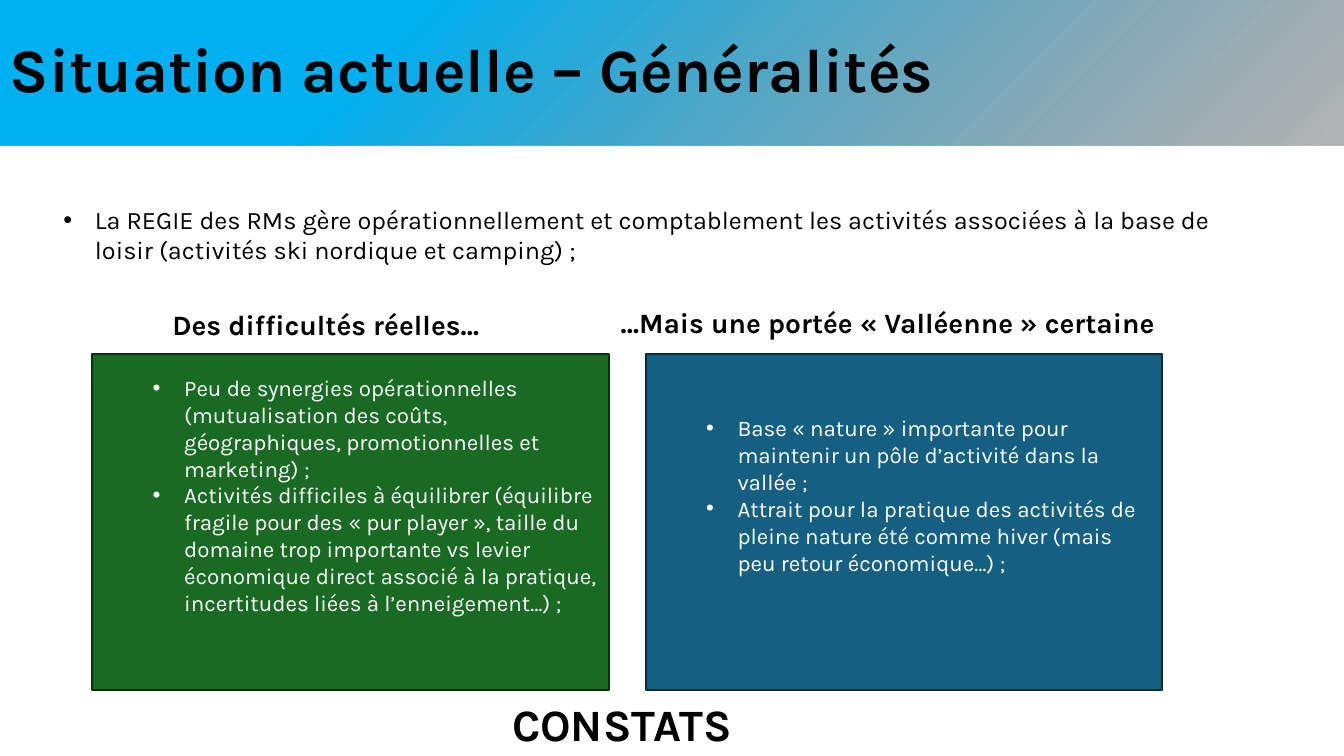
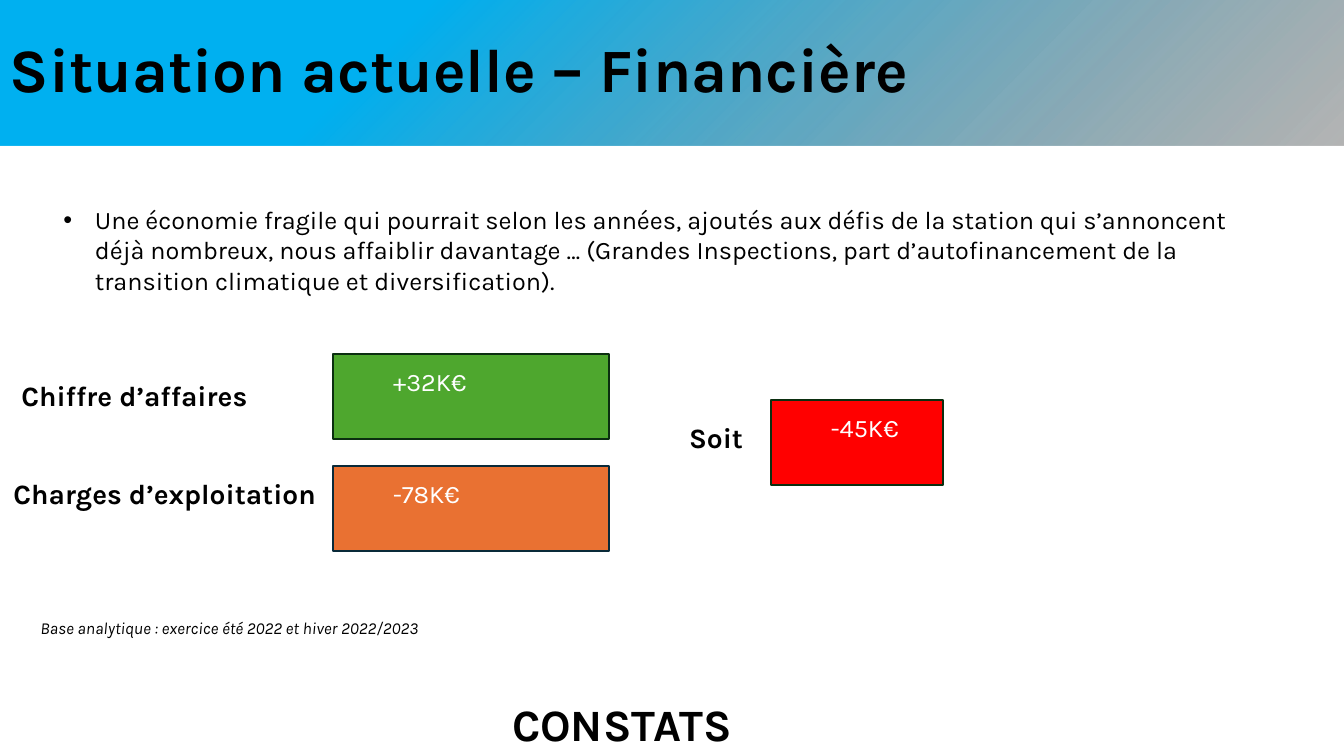
from dataclasses import dataclass

from lxml import etree
from pptx import Presentation
from pptx import util as u
from pptx.dml.color import RGBColor
from pptx.enum import shapes, text
from pptx.oxml import ns

FONT = "Karla"
BLACK = RGBColor(0x00, 0x00, 0x00)
WHITE = RGBColor(0xFF, 0xFF, 0xFF)
SKY = RGBColor(0x00, 0xB0, 0xF0)
GREY = RGBColor(0x62, 0x62, 0x62)
FOREST = RGBColor(0x19, 0x6B, 0x24)
FOREST_EDGE = RGBColor(0x0B, 0x2F, 0x10)
OCEAN = RGBColor(0x15, 0x60, 0x82)
OCEAN_EDGE = RGBColor(0x09, 0x2A, 0x39)
GREEN = RGBColor(0x4E, 0xA7, 0x2E)
ORANGE = RGBColor(0xE9, 0x71, 0x32)
RED = RGBColor(0xFF, 0x00, 0x00)

SLIDE_WIDTH, SLIDE_HEIGHT = 1280, 720
HEADER_HEIGHT = 139
BOX_TOP = 337
PANEL_WIDTH, PANEL_HEIGHT = 492, 320
VALUE_HEIGHT = 81
LABEL_HEIGHT = 42
BULLET_INDENT = 30


def px(length: int) -> u.Emu:
    return u.Emu(length * 9525)


@dataclass(frozen=True)
class TextStyle:
    size: int
    color: RGBColor = BLACK
    bold: bool = False
    italic: bool = False
    align: text.PP_ALIGN = text.PP_ALIGN.LEFT
    margin: int = 0
    bullet: bool = False
    line_spacing: float = 1.0
    bottom_inset: int = 5


@dataclass(frozen=True)
class Area:
    left: int
    top: int
    width: int
    height: int


@dataclass(frozen=True)
class Label:
    area: Area
    wording: str
    style: TextStyle


@dataclass(frozen=True)
class Box:
    area: Area
    fill: RGBColor
    edge: RGBColor
    lines: tuple[str, ...]
    style: TextStyle


TITLE = TextStyle(44, bold=True, line_spacing=0.9)
INTRO = TextStyle(18, margin=30, bullet=True)
HEADING = TextStyle(20, bold=True, align=text.PP_ALIGN.CENTER)
FOOTER = TextStyle(32, bold=True, align=text.PP_ALIGN.CENTER)
NOTE = TextStyle(12, italic=True)
PANEL = TextStyle(16, WHITE, margin=78, bullet=True, bottom_inset=56)
VALUE = TextStyle(18, WHITE, margin=48, bottom_inset=34)

CONSTATS = Label(Area(287, 659, 611, 61), "CONSTATS", FOOTER)


def write_text(shape, lines: tuple[str, ...], style: TextStyle) -> None:
    frame = shape.text_frame
    frame.word_wrap = True
    frame.margin_bottom = px(style.bottom_inset)
    for index, line in enumerate(lines):
        paragraph = frame.add_paragraph() if index else frame.paragraphs[0]
        paragraph.alignment = style.align
        paragraph.line_spacing = style.line_spacing
        properties = paragraph._p.get_or_add_pPr()
        properties.set("marL", str(px(style.margin)))
        if style.bullet:
            properties.set("indent", str(px(-BULLET_INDENT)))
            etree.SubElement(properties, ns.qn("a:buFont"), typeface="Arial")
            etree.SubElement(properties, ns.qn("a:buChar"), char="•")
        run = paragraph.add_run()
        run.text = line
        run.font.name = FONT
        run.font.size = u.Pt(style.size)
        run.font.bold = style.bold
        run.font.italic = style.italic
        run.font.color.rgb = style.color


def add_rectangle(slide, area: Area):
    shape = slide.shapes.add_shape(
        shapes.MSO_SHAPE.RECTANGLE,
        px(area.left), px(area.top), px(area.width), px(area.height),
    )
    shape.shadow.inherit = False
    shape.text_frame.vertical_anchor = text.MSO_ANCHOR.MIDDLE
    return shape


def add_header(slide, title: str) -> None:
    shape = add_rectangle(slide, Area(0, 0, SLIDE_WIDTH, HEADER_HEIGHT))
    shape.line.fill.background()
    shape.fill.gradient()
    shape.fill.gradient_angle = 315
    start, end = shape.fill.gradient_stops
    start.position, start.color.rgb = 0.29, SKY
    end.position, end.color.rgb = 1.0, GREY
    end_color = list(shape.element.iter(ns.qn("a:srgbClr")))[-1]
    etree.SubElement(end_color, ns.qn("a:alpha"), val="47000")
    write_text(shape, (title,), TITLE)


def add_box(slide, box: Box) -> None:
    shape = add_rectangle(slide, box.area)
    shape.fill.solid()
    shape.fill.fore_color.rgb = box.fill
    shape.line.color.rgb = box.edge
    shape.line.width = u.Pt(1.5)
    write_text(shape, box.lines, box.style)


def add_label(slide, label: Label) -> None:
    area = label.area
    shape = slide.shapes.add_textbox(
        px(area.left), px(area.top), px(area.width), px(area.height)
    )
    write_text(shape, (label.wording,), label.style)


def add_slide(
    presentation, title: str, boxes: tuple[Box, ...], labels: tuple[Label, ...]
) -> None:
    slide = presentation.slides.add_slide(presentation.slide_layouts[6])
    add_header(slide, title)
    for box in boxes:
        add_box(slide, box)
    for label in (*labels, CONSTATS):
        add_label(slide, label)


def value_box(
    left: int, top: int, width: int, fill: RGBColor, edge: RGBColor, amount: str
) -> Box:
    return Box(Area(left, top, width, VALUE_HEIGHT), fill, edge, (amount,), VALUE)


GENERAL_BOXES = (
    Box(
        Area(88, BOX_TOP, PANEL_WIDTH, PANEL_HEIGHT), FOREST, FOREST_EDGE,
        (
            "Peu de synergies opérationnelles (mutualisation des coûts, "
            "géographiques, promotionnelles et marketing) ;",
            "Activités difficiles à équilibrer (équilibre fragile pour des "
            "« pur player », taille du domaine trop importante vs levier "
            "économique direct associé à la pratique, incertitudes liées à "
            "l’enneigement…) ;",
        ),
        PANEL,
    ),
    Box(
        Area(615, BOX_TOP, PANEL_WIDTH, PANEL_HEIGHT), OCEAN, OCEAN_EDGE,
        (
            "Base « nature » importante pour maintenir un pôle d’activité "
            "dans la vallée ;",
            "Attrait pour la pratique des activités de pleine nature été "
            "comme hiver (mais peu retour économique…) ;",
        ),
        PANEL,
    ),
)
GENERAL_LABELS = (
    Label(
        Area(51, 190, 1154, 68),
        "La REGIE des RMs gère opérationnellement et comptablement les "
        "activités associées à la base de loisir (activités ski nordique et "
        "camping) ;",
        INTRO,
    ),
    Label(Area(5, 288, 611, LABEL_HEIGHT), "Des difficultés réelles…", HEADING),
    Label(
        Area(540, 286, 611, LABEL_HEIGHT),
        "…Mais une portée « Valléenne » certaine",
        HEADING,
    ),
)
FINANCE_BOXES = (
    value_box(317, BOX_TOP, 263, GREEN, FOREST_EDGE, "+32K€"),
    value_box(317, 444, 263, ORANGE, OCEAN_EDGE, "-78K€"),
    value_box(734, 381, 164, RED, FOREST_EDGE, "-45K€"),
)
FINANCE_LABELS = (
    Label(
        Area(51, 190, 1170, 97),
        "Une économie fragile qui pourrait selon les années, ajoutés aux défis "
        "de la station qui s’annoncent déjà nombreux, nous affaiblir davantage "
        "… (Grandes Inspections, part d’autofinancement de la transition "
        "climatique et diversification).",
        INTRO,
    ),
    Label(Area(0, 356, 256, LABEL_HEIGHT), "Chiffre d’affaires", HEADING),
    Label(Area(0, 449, 314, LABEL_HEIGHT), "Charges d’exploitation", HEADING),
    Label(Area(632, 396, 100, LABEL_HEIGHT), "Soit", HEADING),
    Label(
        Area(29, 584, 684, 29),
        "Base analytique : exercice été 2022 et hiver 2022/2023",
        NOTE,
    ),
)


def main() -> None:
    presentation = Presentation()
    presentation.slide_width = px(SLIDE_WIDTH)
    presentation.slide_height = px(SLIDE_HEIGHT)
    add_slide(
        presentation, "Situation actuelle – Généralités",
        GENERAL_BOXES, GENERAL_LABELS,
    )
    add_slide(
        presentation, "Situation actuelle – Financière",
        FINANCE_BOXES, FINANCE_LABELS,
    )
    presentation.save("out.pptx")


if __name__ == "__main__":
    main()
